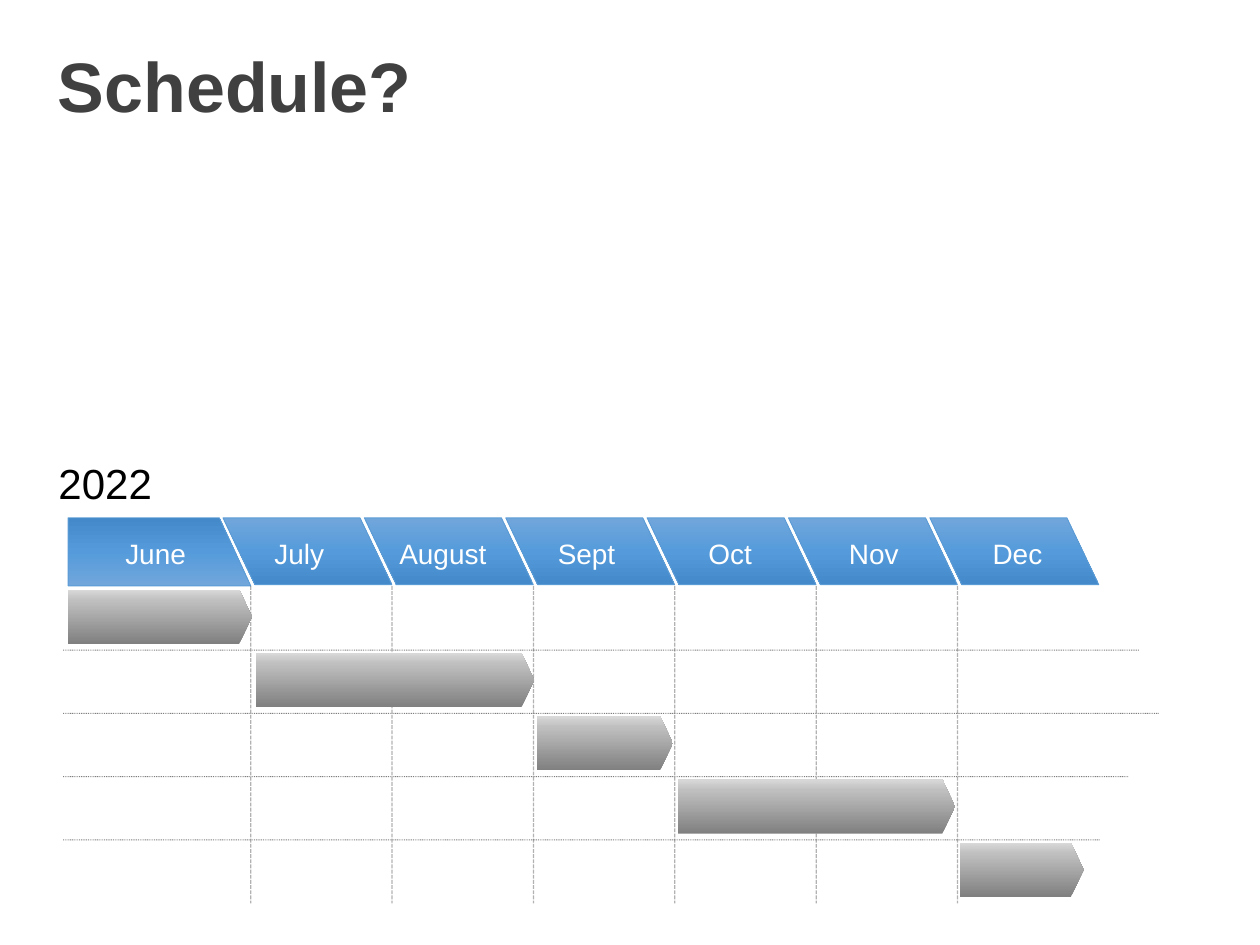
from dataclasses import dataclass

from lxml import etree
from pptx import Presentation
from pptx.dml.color import RGBColor
from pptx.enum.dml import MSO_LINE
from pptx.enum.shapes import MSO_CONNECTOR, MSO_SHAPE
from pptx.enum.text import MSO_ANCHOR, MSO_AUTO_SIZE, PP_ALIGN
from pptx.oxml.ns import qn
from pptx.util import Inches, Pt

PARALLELOGRAM = MSO_SHAPE.PARALLELOGRAM
PENTAGON = MSO_SHAPE.PENTAGON
STRAIGHT = MSO_CONNECTOR.STRAIGHT
SYS_DASH, SYS_DOT = MSO_LINE.SQUARE_DOT, MSO_LINE.ROUND_DOT
LEFT, CENTER = PP_ALIGN.LEFT, PP_ALIGN.CENTER
TOP = MSO_ANCHOR.TOP
GROW, NO_FIT = MSO_AUTO_SIZE.SHAPE_TO_FIT_TEXT, MSO_AUTO_SIZE.NONE
TITLE_ONLY = 5


@dataclass(frozen=True)
class Theme:
    font: str = "Arial"
    title: str = "404040"
    ink: str = "000000"
    month_text: str = "FFFFFF"
    month_edge: str = "5B9BD5"
    month_fill: tuple = ((0, "71A6DB"), (50, "559BDB"), (100, "448ACA"))
    bar_fill: tuple = ((0, "808080"), (80, "BFBFBF"), (100, "D9D9D9"))
    title_size: int = 40
    year_size: int = 24
    month_size: int = 16


THEME = Theme()
MONTHS = ["June", "July", "August", "Sept", "Oct", "Nov", "Dec"]
MONTH_STEP = 1.122
LABEL_STEP = 1.14
ROW_STEP = 0.502
HEADER_TOP, HEADER_BOTTOM = 4.11, 4.65
GRID_LEFT, GRID_BOTTOM = 0.5, 7.17
FIRST_DIVIDER, FIRST_ROW_LINE = 1.99, 5.16
ROW_LINE_ENDS = [9.04, 9.2, 8.96, 8.73]
TASKS = [(0.54, 1.46), (2.03, 2.21), (4.26, 1.08), (5.38, 2.2), (7.62, 0.98)]  # left, width


def fill_gradient(shape, stops, angle):
    """Fill with a linear gradient; the angle runs clockwise in degrees."""
    shape.fill.background()
    plain = shape._element.spPr.find(qn("a:noFill"))
    gradient = etree.Element(qn("a:gradFill"), rotWithShape="1")
    stop_list = etree.SubElement(gradient, qn("a:gsLst"))
    for position, color in stops:
        stop = etree.SubElement(stop_list, qn("a:gs"), pos=str(position * 1000))
        etree.SubElement(stop, qn("a:srgbClr"), val=color)
    etree.SubElement(gradient, qn("a:lin"), ang=str(angle * 60000), scaled="0")
    plain.getparent().replace(plain, gradient)


def style_month(shape, angle):
    shape.shadow.inherit = False
    fill_gradient(shape, THEME.month_fill, angle)
    shape.line.color.rgb = RGBColor.from_string(THEME.month_edge)
    shape.line.width = Pt(0.5)


def add_first_month(slide):
    outline = slide.shapes.build_freeform(Inches(0.54), Inches(HEADER_TOP))
    corners = [(1.74, HEADER_TOP), (1.99, HEADER_BOTTOM), (0.54, HEADER_BOTTOM)]
    outline.add_line_segments([(Inches(x), Inches(y)) for x, y in corners], close=True)
    style_month(outline.convert_to_shape(), 270)


def add_month(slide, left):
    month = slide.shapes.add_shape(
        PARALLELOGRAM, Inches(left), Inches(HEADER_TOP), Inches(1.34), Inches(0.53))
    month.adjustments[0] = 0.477
    month.rotation = 180
    month._element.spPr.xfrm.set("flipV", "1")
    style_month(month, 90)


def add_grid_line(slide, start, end, width, dash, opacity):
    line = slide.shapes.add_connector(STRAIGHT, *map(Inches, start + end))
    line.line.color.rgb = RGBColor.from_string(THEME.ink)
    line.line.width = Pt(width)
    line.line.dash_style = dash
    properties = line._element.spPr
    color = properties.find(".//" + qn("a:srgbClr"))
    etree.SubElement(color, qn("a:alpha"), val=str(opacity * 1000))
    etree.SubElement(properties, qn("a:effectLst"))


def add_task_bar(slide, left, top, width):
    bar = slide.shapes.add_shape(
        PENTAGON, Inches(left), Inches(top), Inches(width), Inches(0.43))
    bar.adjustments[0] = 0.235
    bar.shadow.inherit = False
    fill_gradient(bar, THEME.bar_fill, 270)
    bar.line.fill.background()


def write_text(frame, text, size, color, align, bold=False):
    frame.word_wrap = True
    frame.vertical_anchor = TOP
    paragraph = frame.paragraphs[0]
    paragraph.alignment = align
    run = paragraph.add_run()
    run.text = text
    run.font.name = THEME.font
    run.font.size = Pt(size)
    run.font.bold = bold
    run.font.color.rgb = RGBColor.from_string(color)


def add_label(slide, text, box, size, color):
    label = slide.shapes.add_textbox(*map(Inches, box))
    write_text(label.text_frame, text, size, color, CENTER)
    label.text_frame.auto_size = GROW


def set_title(slide, text):
    title = slide.shapes.title
    title.left, title.top = Inches(0.36), Inches(0.29)
    title.width, title.height = Inches(3.9), Inches(0.77)
    write_text(title.text_frame, text, THEME.title_size, THEME.title, LEFT, bold=True)
    title.text_frame.auto_size = NO_FIT


def main():
    deck = Presentation()
    deck.slide_width, deck.slide_height = Inches(10), Inches(7.5)
    slide = deck.slides.add_slide(deck.slide_layouts[TITLE_ONLY])
    set_title(slide, "Schedule?")

    # Month header
    add_first_month(slide)
    for index in range(len(MONTHS) - 1):
        add_month(slide, 1.77 + index * MONTH_STEP)

    # Month dividers and row lines
    for index in range(len(MONTHS) - 1):
        x = FIRST_DIVIDER + index * MONTH_STEP
        add_grid_line(slide, (x, HEADER_BOTTOM), (x, GRID_BOTTOM), 0.75, SYS_DASH, 30)
    for row, end in enumerate(ROW_LINE_ENDS):
        y = FIRST_ROW_LINE + row * ROW_STEP
        add_grid_line(slide, (GRID_LEFT, y), (end, y), 0.5, SYS_DOT, 50)

    # Task bars
    for row, (left, width) in enumerate(TASKS):
        add_task_bar(slide, left, 4.68 + row * ROW_STEP, width)

    # Month names and year
    for index, month in enumerate(MONTHS):
        box = (0.78 + index * LABEL_STEP, 4.21, 0.91, 0.37)
        add_label(slide, month, box, THEME.month_size, THEME.month_text)
    add_label(slide, "2022", (0.36, 3.58, 0.95, 0.5), THEME.year_size, THEME.ink)

    deck.save("out.pptx")


if __name__ == "__main__":
    main()
